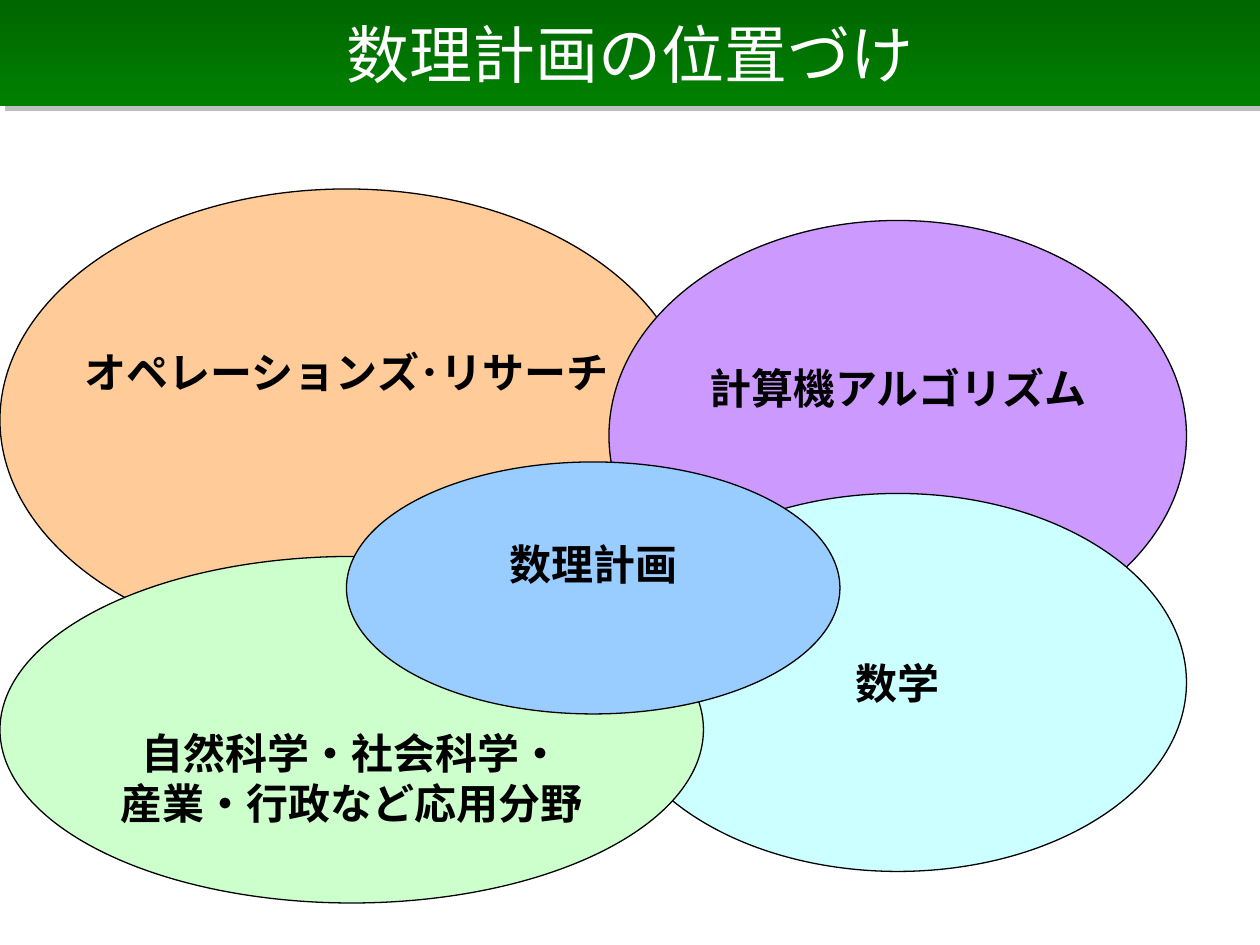
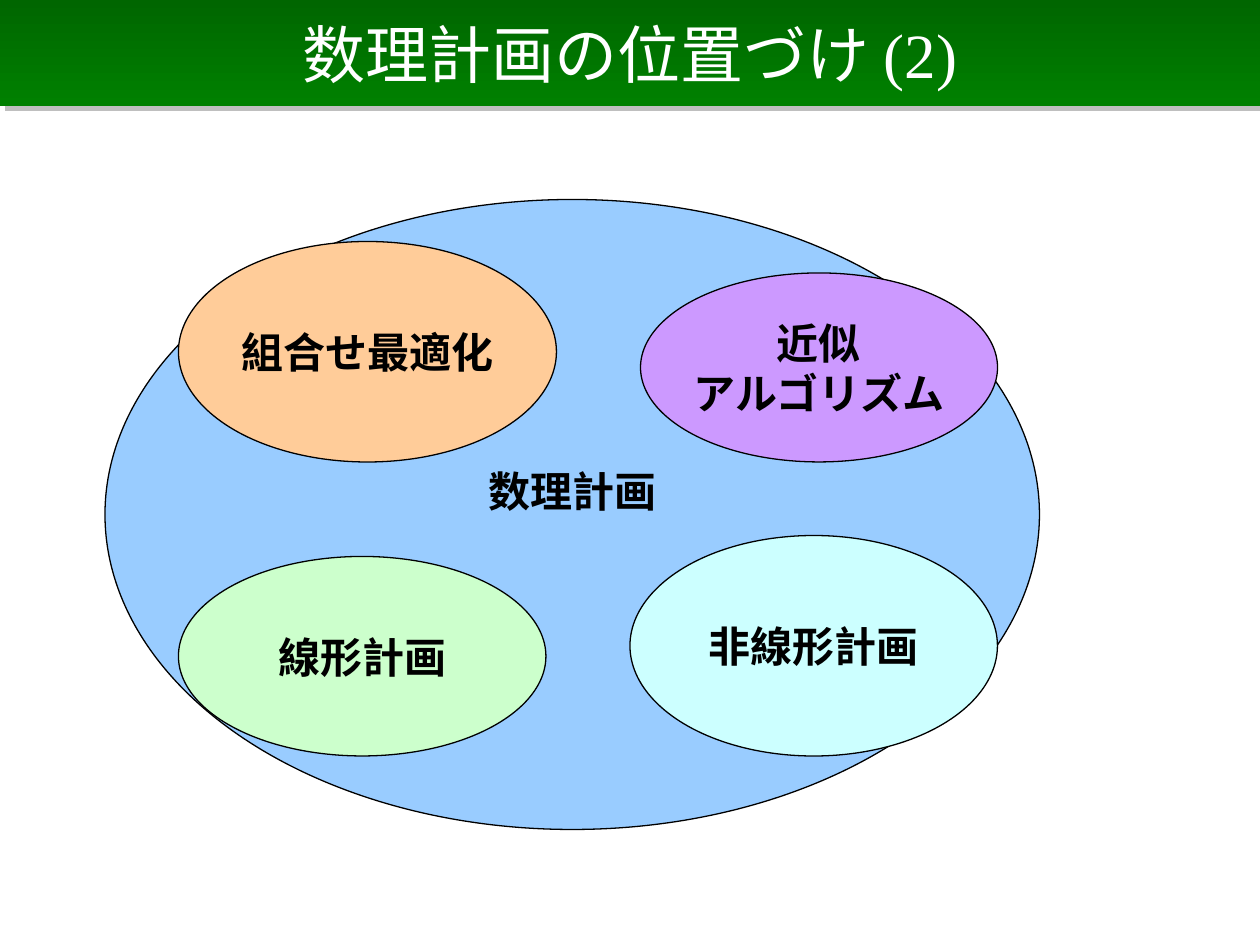
"""Builds two slides of overlapping ellipses that place mathematical programming among its fields."""
from lxml import etree
from pptx import Presentation
from pptx.dml.color import RGBColor
from pptx.enum.shapes import MSO_SHAPE
from pptx.enum.text import MSO_ANCHOR, MSO_AUTO_SIZE, PP_ALIGN
from pptx.oxml.ns import qn
from pptx.util import Inches, Pt

ELLIPSE = MSO_SHAPE.OVAL
MIDDLE = MSO_ANCHOR.MIDDLE
CENTER = PP_ALIGN.CENTER
FIXED_SIZE = MSO_AUTO_SIZE.NONE

COLOURS = {
    "band_top": "006600", "band_bottom": "008000", "band_shadow": "808080",
    "white": "FFFFFF", "black": "000000",
    "orange": "FFCC99", "purple": "CC99FF", "cyan": "CCFFFF",
    "green": "CCFFCC", "blue": "99CCFF",
}
FONT = "Times New Roman"
TITLE_SIZE, LABEL_SIZE = 36, 24
TITLE_ONLY_LAYOUT = 5
BAND_HEIGHT = 0.84
GRID = Inches(1) // 12
LABEL_STEP = Inches(0.38)
INSET = Inches(0.05)

# Each ellipse: label lines, colour, (column, row, columns, rows), label lift in lines
SLIDES = [
    ("数理計画の位置づけ", [
        (["オペレーションズ･リサーチ"], "orange", (0, 18, 66, 44), 2),
        (["計算機アルゴリズム"], "purple", (58, 21, 55, 41), 2),
        (["数学"], "cyan", (58, 47, 55, 36), 0),
        (["自然科学・社会科学・", "産業・行政など応用分野"], "green", (0, 53, 67, 33), -2),
        (["数理計画"], "blue", (33, 44, 47, 24), 1),
    ]),
    ("数理計画の位置づけ (2)", [
        (["数理計画"], "blue", (10, 19, 89, 60), 1),
        (["組合せ最適化"], "orange", (17, 23, 36, 21), 0),
        (["近似", "アルゴリズム"], "purple", (61, 26, 34, 18), 0),
        (["非線形計画"], "cyan", (60, 51, 35, 21), 0),
        (["線形計画"], "green", (17, 53, 35, 19), 0),
    ]),
]


def colour(name):
    return RGBColor.from_string(COLOURS[name])


def write(frame, lines, size, colour_name, bold):
    frame.text = "\n".join(lines)
    frame.vertical_anchor = MIDDLE
    for para in frame.paragraphs:
        para.alignment = CENTER
        para.font.name = FONT
        para.font.size = Pt(size)
        para.font.bold = bold
        para.font.color.rgb = colour(colour_name)


def add_band_shadow(band):
    band.shadow.inherit = False
    effects = band._element.spPr.find(qn("a:effectLst"))
    shadow = etree.SubElement(effects, qn("a:outerShdw"), blurRad="0",
                              dist=str(Pt(4.2)), dir=str(45 * 60000),
                              algn="ctr", rotWithShape="0")
    tint = etree.SubElement(shadow, qn("a:srgbClr"), val=COLOURS["band_shadow"])
    etree.SubElement(tint, qn("a:alpha"), val="50000")


def set_title(page, text, width):
    band = page.shapes.title
    band.left, band.top, band.width, band.height = 0, 0, width, Inches(BAND_HEIGHT)
    band.fill.gradient()
    band.fill.gradient_angle = 270
    for stop, name in zip(band.fill.gradient_stops, ("band_top", "band_bottom")):
        stop.color.rgb = colour(name)
    add_band_shadow(band)
    band.text_frame.auto_size = FIXED_SIZE
    write(band.text_frame, [text], TITLE_SIZE, "white", False)


def add_field(page, lines, fill, place, lift):
    field = page.shapes.add_shape(ELLIPSE, *(GRID * cells for cells in place))
    field.shadow.inherit = False
    field.fill.solid()
    field.fill.fore_color.rgb = colour(fill)
    field.line.color.rgb = colour("black")
    field.line.width = Pt(0.75)
    frame = field.text_frame
    frame.word_wrap = False
    frame.margin_top = INSET + LABEL_STEP * max(-lift, 0)
    frame.margin_bottom = INSET + LABEL_STEP * max(lift, 0)
    write(frame, lines, LABEL_SIZE, "black", True)


def main():
    deck = Presentation()
    deck.slide_width, deck.slide_height = Inches(10), Inches(7.5)
    for title, fields in SLIDES:
        page = deck.slides.add_slide(deck.slide_layouts[TITLE_ONLY_LAYOUT])
        set_title(page, title, deck.slide_width)
        for field in fields:
            add_field(page, *field)
    deck.save("out.pptx")


if __name__ == "__main__":
    main()
